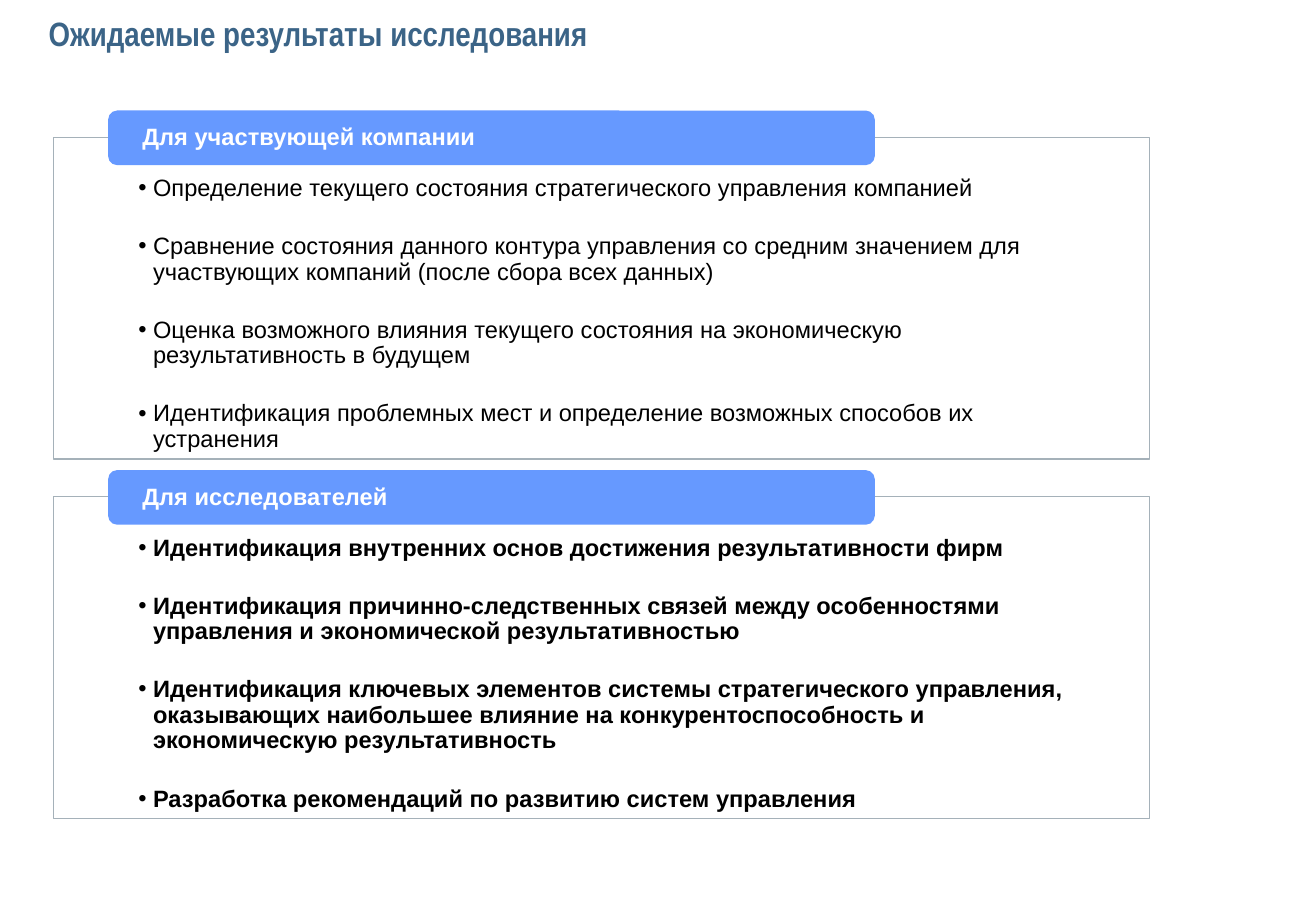
from dataclasses import dataclass

from lxml import etree
from pptx import Presentation
from pptx import util as u
from pptx.dml import color
from pptx.enum import shapes, text
from pptx.oxml import ns


@dataclass(frozen=True)
class Theme:
    title: str = "3B6487"
    head: str = "6699FF"
    edge: str = "A5B1B9"
    light: str = "FFFFFF"
    dark: str = "000000"
    big: int = 20
    small: int = 14
    face: str = "Arial"
    slim: str = "Arial Narrow"


@dataclass(frozen=True)
class Box:
    left: float
    top: float
    width: float
    height: float


@dataclass(frozen=True)
class Panel:
    head: str
    items: tuple[str, ...]
    bold: bool


THEME = Theme()
WIDTH, HEIGHT = u.Inches(10.83), u.Inches(7.5)
TITLE = Box(2.77, 0.27, 84.86, 6.8)
FRAME = Box(4.06, 15.07, 83.29, 35.33)
HEAD = Box(8.22, 12.13, 58.26, 6)
STEP = 39.47
PANELS = (
    Panel("Для участвующей компании", (
        "Определение текущего состояния стратегического управления компанией",
        "Сравнение состояния данного контура управления со средним значением "
        "для участвующих компаний (после сбора всех данных)",
        "Оценка возможного влияния текущего состояния на экономическую "
        "результативность в будущем",
        "Идентификация проблемных мест и определение возможных способов их "
        "устранения",
    ), False),
    Panel("Для исследователей", (
        "Идентификация внутренних основ достижения результативности фирм",
        "Идентификация причинно-следственных связей между особенностями "
        "управления и экономической результативностью",
        "Идентификация ключевых элементов системы стратегического управления, "
        "оказывающих наибольшее влияние на конкурентоспособность и "
        "экономическую результативность",
        "Разработка рекомендаций по развитию систем управления",
    ), True),
)


def place(box: Box, drop: float = 0) -> tuple[int, int, int, int]:
    return (int(WIDTH * box.left / 100), int(HEIGHT * (box.top + drop) / 100),
            int(WIDTH * box.width / 100), int(HEIGHT * box.height / 100))


def style(para, size: int, tint: str, bold: bool, face: str = THEME.face) -> None:
    para.alignment = text.PP_ALIGN.LEFT
    font = para.font
    font.name, font.size, font.bold = face, u.Pt(size), bold
    font.color.rgb = color.RGBColor.from_string(tint)


def inset(frame, side: float, top: float, base: float) -> None:
    frame.word_wrap = True
    frame.margin_left = frame.margin_right = u.Inches(side)
    frame.margin_top, frame.margin_bottom = u.Inches(top), u.Inches(base)


def block(slide, kind, box: Box, drop: float, fill: str):
    shape = slide.shapes.add_shape(kind, *place(box, drop))
    shape.shadow.inherit = False
    shape.fill.solid()
    shape.fill.fore_color.rgb = color.RGBColor.from_string(fill)
    shape.line.fill.background()
    return shape


def bullet(para) -> None:
    props = para._p.get_or_add_pPr()
    props.set("marL", str(u.Inches(0.12)))
    props.set("indent", str(-u.Inches(0.12)))
    etree.SubElement(props, ns.qn("a:buFont")).set("typeface", THEME.face)
    etree.SubElement(props, ns.qn("a:buChar")).set("char", "•")


def draw(slide, panel: Panel, drop: float) -> None:
    body = block(slide, shapes.MSO_SHAPE.RECTANGLE, FRAME, drop, THEME.light)
    body.line.color.rgb = color.RGBColor.from_string(THEME.edge)
    body.line.width = u.Pt(0.75)
    frame = body.text_frame
    inset(frame, 0.7, 0.32, 0.11)
    frame.vertical_anchor = text.MSO_ANCHOR.TOP
    for rank, item in enumerate(panel.items):
        para = frame.add_paragraph() if rank else frame.paragraphs[0]
        para.text = item
        bullet(para)
        para.line_spacing = 0.9
        para.space_before = u.Pt(19.3 if rank else 0)
        style(para, THEME.small, THEME.dark, panel.bold)

    head = block(slide, shapes.MSO_SHAPE.ROUNDED_RECTANGLE, HEAD, drop, THEME.head)
    frame = head.text_frame
    inset(frame, 0.26, 0, 0)
    frame.vertical_anchor = text.MSO_ANCHOR.MIDDLE
    frame.text = panel.head
    frame.paragraphs[0].line_spacing = 0.9
    style(frame.paragraphs[0], THEME.small, THEME.light, True)


def main() -> None:
    deck = Presentation()
    deck.slide_width, deck.slide_height = WIDTH, HEIGHT
    slide = deck.slides.add_slide(deck.slide_layouts[5])
    title = slide.shapes.title
    title.left, title.top, title.width, title.height = place(TITLE)
    frame = title.text_frame
    inset(frame, 0.1, 0.05, 0.05)
    frame.vertical_anchor = text.MSO_ANCHOR.MIDDLE
    frame.text = "Ожидаемые результаты исследования"
    style(frame.paragraphs[0], THEME.big, THEME.title, True, THEME.slim)
    for rank, panel in enumerate(PANELS):
        draw(slide, panel, rank * STEP)
    deck.save("out.pptx")


if __name__ == "__main__":
    main()
